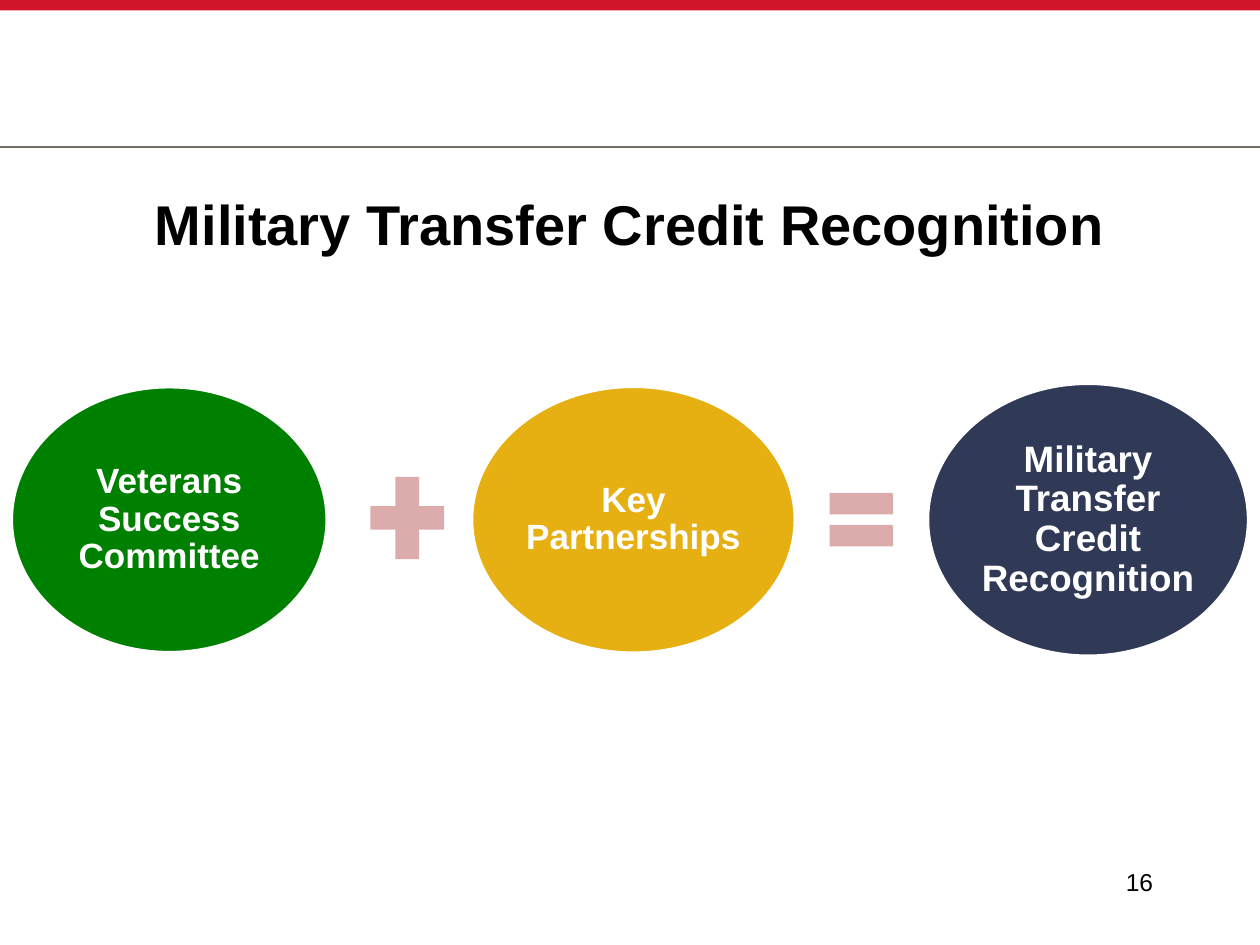
from lxml.etree import SubElement
from pptx import Presentation
from pptx.dml.color import RGBColor
from pptx.enum.shapes import MSO_CONNECTOR as CONNECTOR, MSO_SHAPE as SHAPE
from pptx.enum.text import MSO_ANCHOR as ANCHOR, PP_ALIGN as ALIGN
from pptx.oxml.ns import qn
from pptx.util import Pt

WIDTH, HEIGHT = 720, 540
MIDDLE = 297  # shared centre line of the equation
FONT = "Arial"
COLORS = {
    "red": "CF142B", "rule": "746F66", "title": "010000", "number": "000000",
    "green": "008000", "gold": "E6B012", "navy": "303A56",
    "operator": "DCABAB", "white": "FFFFFF",
}

TITLE = "Military Transfer Credit Recognition"
PAGE_NUMBER = "16"
# text, left, width, height, colour, text size
TERMS = [
    ("Veterans Success Committee", 6.5, 180.5, 152, "green", 20),
    ("Key Partnerships", 269.5, 185, 152.5, "gold", 20),
    (TITLE, 530, 183.5, 156, "navy", 21),
]
# shape, left, top, width, height
OPERATORS = [
    (SHAPE.MATH_PLUS, 204, 264, 57.5, 64),
    (SHAPE.MATH_EQUAL, 467.5, 271, 49.5, 52),
]


def color(name):
    return RGBColor.from_string(COLORS[name])


def add_filled(kind, left, top, width, height, fill):
    shape = slide.shapes.add_shape(kind, Pt(left), Pt(top), Pt(width), Pt(height))
    shape.shadow.inherit = False
    shape.fill.solid()
    shape.fill.fore_color.rgb = color(fill)
    shape.line.fill.background()
    return shape


def write(shape, text, size, ink, align, anchor, bold=False):
    frame = shape.text_frame
    frame.word_wrap = True
    frame.vertical_anchor = anchor
    paragraph = frame.paragraphs[0]
    paragraph.text = text
    paragraph.alignment = align
    font = paragraph.font
    font.name, font.size, font.bold = FONT, Pt(size), bold
    font.color.rgb = color(ink)
    return frame


prs = Presentation()
prs.slide_width, prs.slide_height = Pt(WIDTH), Pt(HEIGHT)
slide = prs.slides.add_slide(prs.slide_layouts[6])

# Header band and rule
add_filled(SHAPE.RECTANGLE, 0, 0, WIDTH, 6, "red")
rule = slide.shapes.add_connector(CONNECTOR.STRAIGHT, 0, Pt(84), Pt(WIDTH), Pt(84))
rule.line.color.rgb = color("rule")
rule.line.width = Pt(0.75)
SubElement(rule._element.spPr, qn("a:effectLst"))

# Title and page number
title = slide.shapes.add_textbox(Pt(36), Pt(90), Pt(648), Pt(60))
write(title, TITLE, 32, "title", ALIGN.CENTER, ANCHOR.BOTTOM, bold=True)
number = slide.shapes.add_textbox(Pt(516), Pt(492), Pt(150), Pt(36))
write(number, PAGE_NUMBER, 14, "number", ALIGN.RIGHT, ANCHOR.TOP)

# Terms of the equation
for text, left, width, height, fill, size in TERMS:
    term = add_filled(SHAPE.OVAL, left, MIDDLE - height / 2, width, height, fill)
    term.line.color.rgb = color("white")
    term.line.width = Pt(2)
    frame = write(term, text, size, "white", ALIGN.CENTER, ANCHOR.MIDDLE, bold=True)
    frame.paragraphs[0].line_spacing = 0.9
    frame.margin_left = frame.margin_right = Pt(2)
    frame.margin_top = frame.margin_bottom = Pt(2)

# Plus and equals signs
for kind, left, top, width, height in OPERATORS:
    add_filled(kind, left, top, width, height, "operator")

prs.save("out.pptx")
